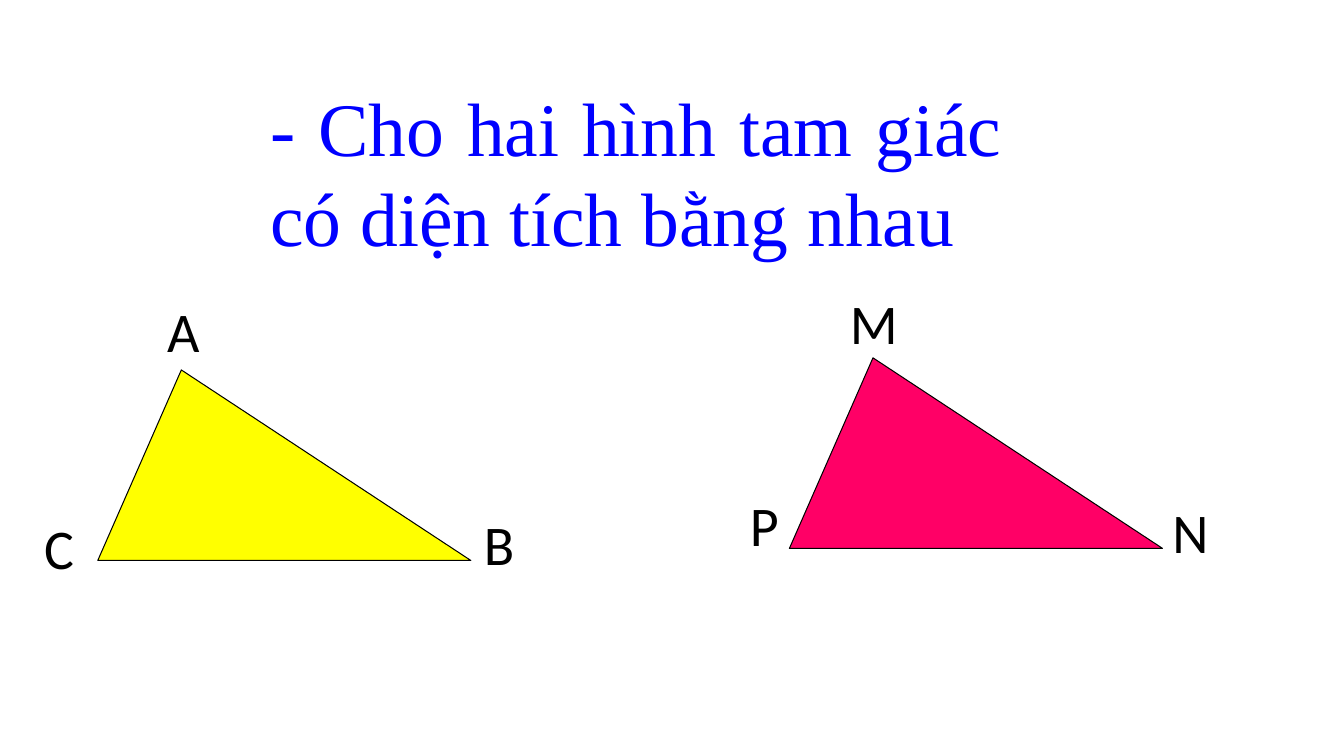
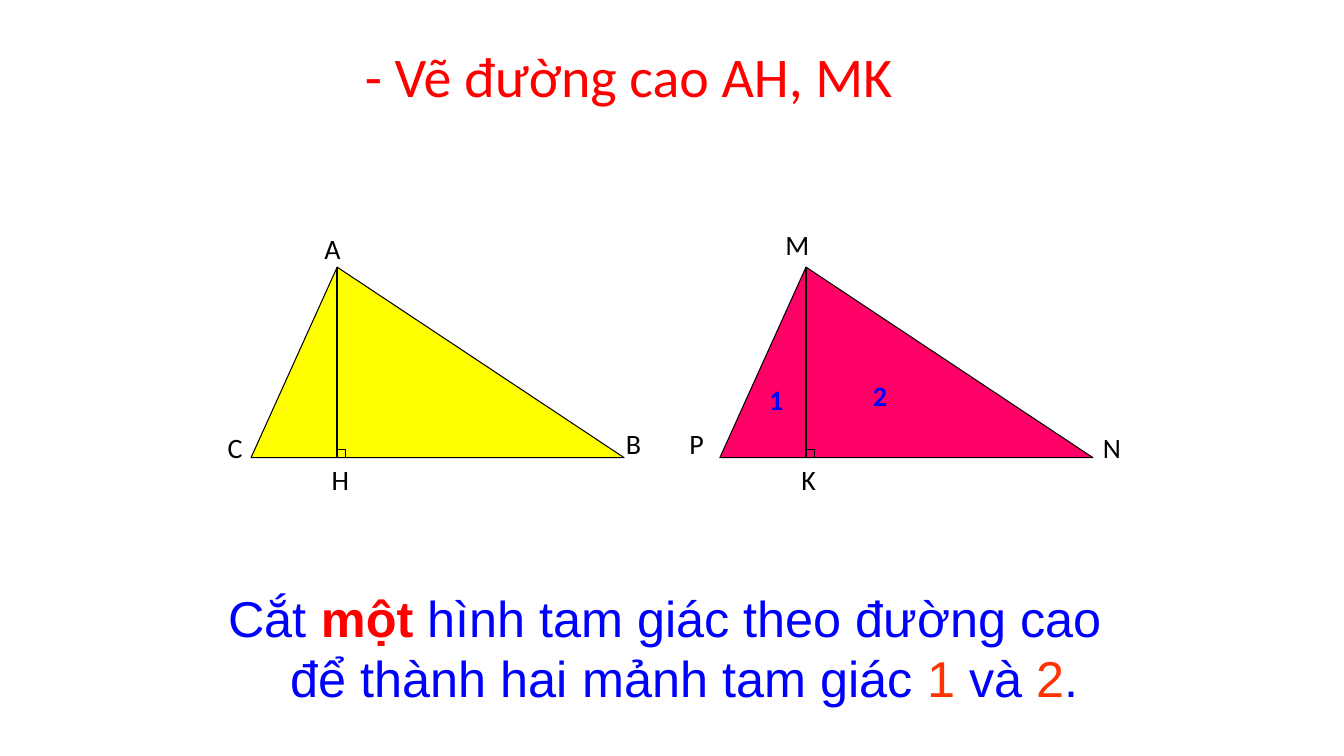
from dataclasses import dataclass

from lxml import etree
from pptx import Presentation
from pptx.dml.color import RGBColor
from pptx.enum import shapes, text
from pptx.oxml import ns
from pptx.util import Inches, Pt

BLACK = RGBColor(0x00, 0x00, 0x00)
BLUE = RGBColor(0x00, 0x00, 0xFF)
RED = RGBColor(0xFF, 0x00, 0x00)
ORANGE = RGBColor(0xFF, 0x33, 0x00)
YELLOW = RGBColor(0xFF, 0xFF, 0x00)
PINK = RGBColor(0xFF, 0x00, 0x66)

LABEL_FONT = "Calibri"
TRIANGLE_WIDTH, TRIANGLE_HEIGHT = 3.7, 1.89
RIGHT_ANGLE_SIDE = 0.08
HANGING_INDENT = 0.38


@dataclass(frozen=True)
class Label:
    name: str
    left: float
    top: float
    width: float = 0.47
    color: RGBColor = BLACK
    bold: bool = False


@dataclass(frozen=True)
class Triangle:
    left: float
    top: float
    apex: float  # share of the base that lies left of the apex
    fill: RGBColor
    labels: tuple[Label, ...]


GIVEN_TRIANGLES = (
    Triangle(0.97, 3.67, 0.224, YELLOW, (
        Label("C", 0.34, 5.05), Label("A", 1.56, 2.89), Label("B", 4.7, 5.01))),
    Triangle(7.83, 3.55, 0.224, PINK, (
        Label("M", 8.33, 2.81, 0.55), Label("N", 11.53, 4.89), Label("P", 7.34, 4.82))),
)

CUT_TRIANGLES = (
    Triangle(2.49, 2.65, 0.231, YELLOW, (
        Label("C", 2.16, 4.22), Label("A", 3.12, 2.25), Label("B", 6.11, 4.18),
        Label("H", 3.19, 4.54, 0.38))),
    Triangle(7.14, 2.65, 0.231, PINK, (
        Label("M", 7.69, 2.21, 0.55), Label("N", 10.84, 4.22), Label("P", 6.74, 4.18),
        Label("K", 7.85, 4.54, 0.35),
        Label("1", 7.53, 3.75, 0.36, BLUE, True),
        Label("2", 8.56, 3.71, 0.36, BLUE, True))),
)

CUTTING_STEP = (
    ("Cắt ", BLUE, False),
    ("một ", RED, True),
    ("hình tam giác theo đường cao để thành hai mảnh tam giác ", BLUE, False),
    ("1 ", ORANGE, False),
    ("và ", BLUE, False),
    ("2", ORANGE, False),
    (".", BLUE, False),
)


def place(shape, left: float, top: float, width: float, height: float) -> None:
    shape.left, shape.top = Inches(left), Inches(top)
    shape.width, shape.height = Inches(width), Inches(height)


def format_paragraph(shape, font: str, size: int, align):
    """Set up a one-paragraph frame from the top and return its paragraph."""
    frame = shape.text_frame
    frame.word_wrap = True
    frame.auto_size = text.MSO_AUTO_SIZE.NONE
    frame.vertical_anchor = text.MSO_ANCHOR.TOP
    paragraph = frame.paragraphs[0]
    paragraph.alignment = align
    paragraph.space_before = Pt(0)
    paragraph.font.name = font
    paragraph.font.size = Pt(size)
    return paragraph


def set_title(slide, wording: str, box: tuple[float, ...], font: str, size: int,
              color: RGBColor, align=text.PP_ALIGN.LEFT) -> None:
    title = slide.shapes.title
    place(title, *box)
    title.text_frame.text = wording
    format_paragraph(title, font, size, align).font.color.rgb = color


def set_cutting_step(slide) -> None:
    body = slide.placeholders[1]
    place(body, 2.15, 5.77, 8.9, 1.46)
    paragraph = format_paragraph(body, "Arial", 36, text.PP_ALIGN.CENTER)
    properties = paragraph._p.get_or_add_pPr()
    properties.set("marL", str(Inches(HANGING_INDENT)))
    properties.set("indent", str(-Inches(HANGING_INDENT)))
    no_bullet = etree.Element(ns.qn("a:buNone"))
    properties.find(ns.qn("a:defRPr")).addprevious(no_bullet)
    for wording, color, bold in CUTTING_STEP:
        run = paragraph.add_run()
        run.text = wording
        run.font.name = "Arial"
        run.font.size = Pt(36)
        run.font.bold = bold
        run.font.color.rgb = color


def add_label(slide, label: Label, size: int) -> None:
    height = 0.017 * size + 0.09
    box = slide.shapes.add_textbox(
        Inches(label.left), Inches(label.top), Inches(label.width), Inches(height))
    box.text_frame.text = label.name
    font = format_paragraph(box, LABEL_FONT, size, text.PP_ALIGN.LEFT).font
    font.bold = label.bold
    font.color.rgb = label.color


def add_outlined(slide, kind, left: float, top: float, width: float, height: float):
    shape = slide.shapes.add_shape(
        kind, Inches(left), Inches(top), Inches(width), Inches(height))
    shape.shadow.inherit = False
    shape.fill.background()
    shape.line.color.rgb = BLACK
    shape.line.width = Pt(0.75)
    return shape


def add_triangle(slide, triangle: Triangle, label_size: int) -> None:
    shape = add_outlined(slide, shapes.MSO_SHAPE.ISOSCELES_TRIANGLE,
                         triangle.left, triangle.top, TRIANGLE_WIDTH, TRIANGLE_HEIGHT)
    shape.adjustments[0] = triangle.apex
    shape.fill.solid()
    shape.fill.fore_color.rgb = triangle.fill
    for label in triangle.labels:
        add_label(slide, label, label_size)


def add_altitude(slide, triangle: Triangle) -> None:
    """Drop the height from the apex and mark its right angle."""
    foot = triangle.left + triangle.apex * TRIANGLE_WIDTH
    base = triangle.top + TRIANGLE_HEIGHT
    altitude = slide.shapes.add_connector(
        shapes.MSO_CONNECTOR.STRAIGHT,
        Inches(foot), Inches(triangle.top), Inches(foot), Inches(base))
    altitude.line.color.rgb = BLACK
    altitude.line.width = Pt(1.5)
    etree.SubElement(altitude._element.spPr, ns.qn("a:effectLst"))
    add_outlined(slide, shapes.MSO_SHAPE.RECTANGLE, foot, base - RIGHT_ANGLE_SIDE,
                 RIGHT_ANGLE_SIDE, RIGHT_ANGLE_SIDE)


def add_given_slide(deck) -> None:
    slide = deck.slides.add_slide(deck.slide_layouts.get_by_name("Title Only"))
    set_title(slide, "- Cho hai hình tam giác có diện tích bằng nhau",
              (2.58, 0.75, 7.46, 1.92), "Times New Roman", 54, BLUE,
              text.PP_ALIGN.JUSTIFY)
    for triangle in GIVEN_TRIANGLES:
        add_triangle(slide, triangle, 40)


def add_cutting_slide(deck) -> None:
    slide = deck.slides.add_slide(deck.slide_layouts.get_by_name("Title and Content"))
    set_title(slide, "- Vẽ đường cao AH, MK", (3.52, 0.36, 6.3, 0.77),
              LABEL_FONT, 40, RED)
    for triangle in CUT_TRIANGLES:
        add_triangle(slide, triangle, 20)
        add_altitude(slide, triangle)
    set_cutting_step(slide)


def main() -> None:
    deck = Presentation()
    deck.slide_width, deck.slide_height = Inches(13.33), Inches(7.5)
    add_given_slide(deck)
    add_cutting_slide(deck)
    deck.save("out.pptx")


if __name__ == "__main__":
    main()
